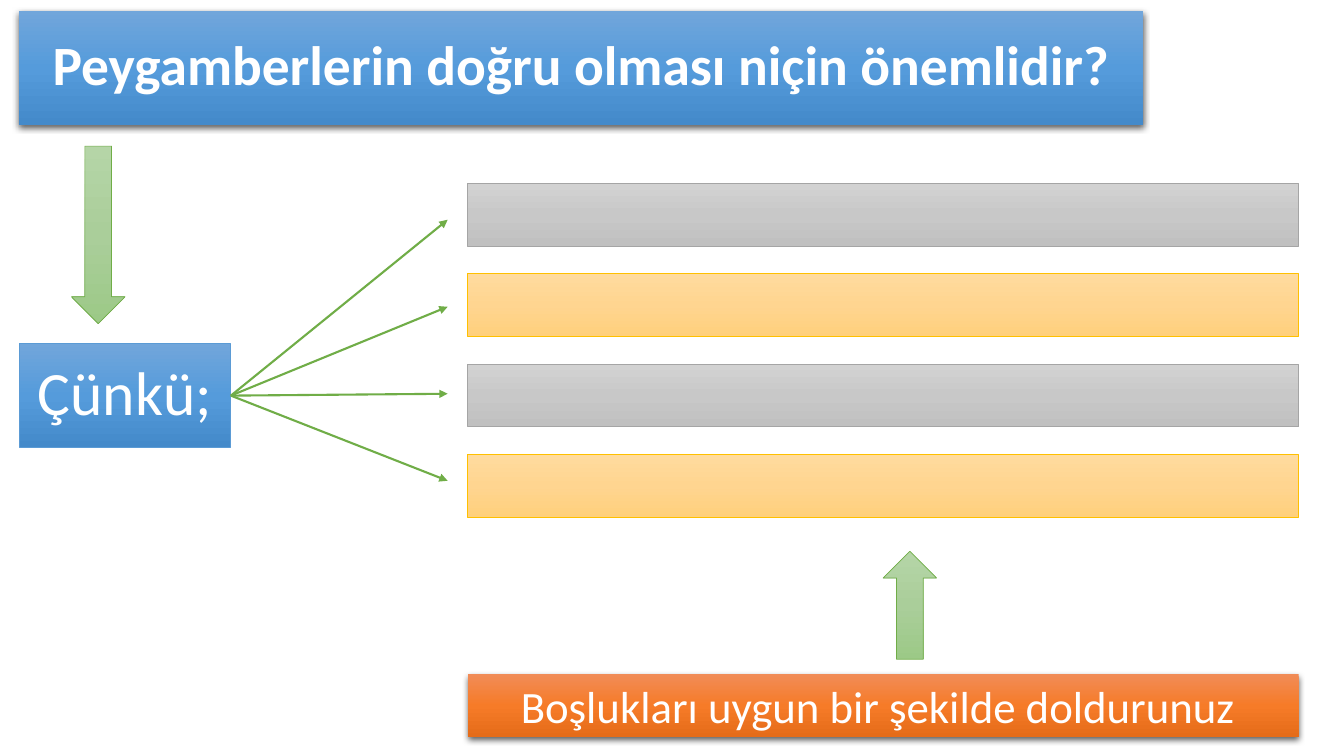
import pptx
import pptx.util
import pptx.dml.color
import pptx.enum.shapes
import pptx.enum.text
import pptx.oxml.ns
from lxml import etree

Inches, Pt = pptx.util.Inches, pptx.util.Pt
KIND = pptx.enum.shapes.MSO_SHAPE
qn = pptx.oxml.ns.qn

INK = {"text": "FFFFFF", "blue": "5B9BD5", "gray": "A5A5A5",
       "gold": "FFC000", "green": "70AD47", "shade": "000000"}
GRAD = {"blue": ("71A6DB", "559BDB", "448ACA"),
        "gray": ("D2D2D2", "C8C8C8", "C0C0C0"),
        "gold": ("FFDB9E", "FFD590", "FFD07C"),
        "green": ("B5D5A7", "AACE9A", "9CC987"),
        "orange": ("F18C57", "F67B28", "E56C19")}


def rgb(name):
    return pptx.dml.color.RGBColor.from_string(INK[name])


def paint(shape, tone):
    """Fill with a three-stop gradient running from top to bottom."""
    shape.fill.gradient()
    shape.fill.gradient_angle = 270
    stops = shape._element.spPr.find(".//" + qn("a:gsLst"))
    for stop in list(stops):
        stops.remove(stop)
    for i, shade in enumerate(GRAD[tone]):
        stop = etree.SubElement(stops, qn("a:gs"), pos=str(i * 50000))
        etree.SubElement(stop, qn("a:srgbClr"), val=shade)


def finish(shape, tone, raised=False):
    """Paint a shape, then give it either a drop shadow or a thin outline."""
    paint(shape, tone)
    shape.shadow.inherit = False
    if not raised:
        shape.line.color.rgb = rgb(tone)
        shape.line.width = Pt(0.5)
        return
    shape.line.fill.background()
    effects = shape._element.spPr.find(qn("a:effectLst"))
    drop = etree.SubElement(effects, qn("a:outerShdw"), blurRad=str(Pt(4.5)),
                            dist=str(Pt(1.5)), dir="5400000", algn="ctr",
                            rotWithShape="0")
    color = etree.SubElement(drop, qn("a:srgbClr"), val=INK["shade"])
    etree.SubElement(color, qn("a:alpha"), val="63000")


def write(shape, text, size, bold=False, spacing=1.0):
    frame = shape.text_frame
    frame.text = text
    frame.word_wrap = True
    frame.auto_size = pptx.enum.text.MSO_AUTO_SIZE.NONE
    frame.vertical_anchor = pptx.enum.text.MSO_ANCHOR.MIDDLE
    para = frame.paragraphs[0]
    para.alignment = pptx.enum.text.PP_ALIGN.CENTER
    para.line_spacing = spacing
    font = para.font
    font.name, font.size, font.bold = "Calibri", Pt(size), bold
    font.color.rgb = rgb("text")


def block(slide, box, tone, kind=KIND.RECTANGLE, raised=False):
    shape = slide.shapes.add_shape(kind, *map(Inches, box))
    finish(shape, tone, raised)
    return shape


def head(slide, box):
    title = slide.shapes.title
    title.left, title.top, title.width, title.height = map(Inches, box)
    finish(title, "blue", raised=True)
    write(title, "Peygamberlerin doğru olması niçin önemlidir?", 39.6,
          bold=True, spacing=0.9)


def cause(slide, box):
    shape = block(slide, box, "blue")
    write(shape, "Çünkü;", 44, spacing=0.9)
    return shape


def blanks(slide, box, count=4, high=0.62):
    """Stack empty answer bars evenly over the height of the box."""
    left, top, width, height = box
    step = (height - high) / (count - 1)
    for i in range(count):
        block(slide, (left, top + i * step, width, high),
              ("gray", "gold")[i % 2])


def fan(slide, start, x, top, bottom, count=4):
    """Draw arrows from the right side of a shape to evenly spaced points."""
    for i in range(count):
        y = top + i * (bottom - top) / (count - 1)
        arrow = slide.shapes.add_connector(
            pptx.enum.shapes.MSO_CONNECTOR.STRAIGHT,
            0, 0, Inches(x), Inches(y))
        arrow.begin_connect(start, 3)
        arrow.line.color.rgb = rgb("green")
        arrow.line.width = Pt(1.5)
        etree.SubElement(arrow.line._get_or_add_ln(), qn("a:tailEnd"),
                         type="triangle")
        etree.SubElement(arrow._element.spPr, qn("a:effectLst"))


def task(slide, box):
    shape = block(slide, box, "orange", raised=True)
    write(shape, "Boşlukları uygun bir şekilde doldurunuz ", 32)


def main():
    deck = pptx.Presentation()
    deck.slide_width, deck.slide_height = Inches(13.33), Inches(7.5)
    slide = deck.slides.add_slide(deck.slide_layouts[5])
    head(slide, (0.19, 0.11, 11.15, 1.13))
    start = cause(slide, (0.19, 3.41, 2.1, 1.03))
    blanks(slide, (4.64, 1.82, 8.24, 3.31))
    block(slide, (0.71, 1.45, 0.53, 1.76), "green", KIND.DOWN_ARROW)
    fan(slide, start, 4.44, 2.18, 4.77)
    task(slide, (4.64, 6.69, 8.24, 0.62))
    block(slide, (8.76, 5.47, 0.53, 1.07), "green", KIND.UP_ARROW)
    deck.save("out.pptx")


if __name__ == "__main__":
    main()
